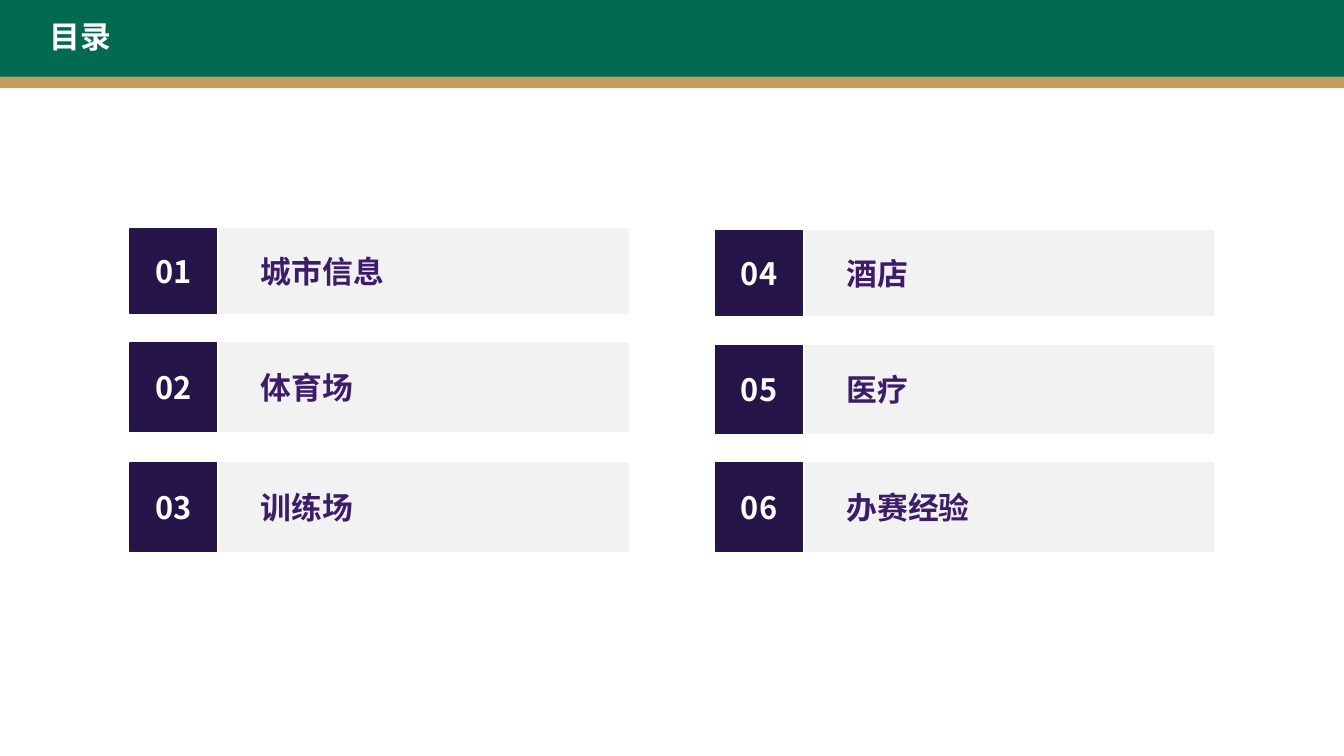
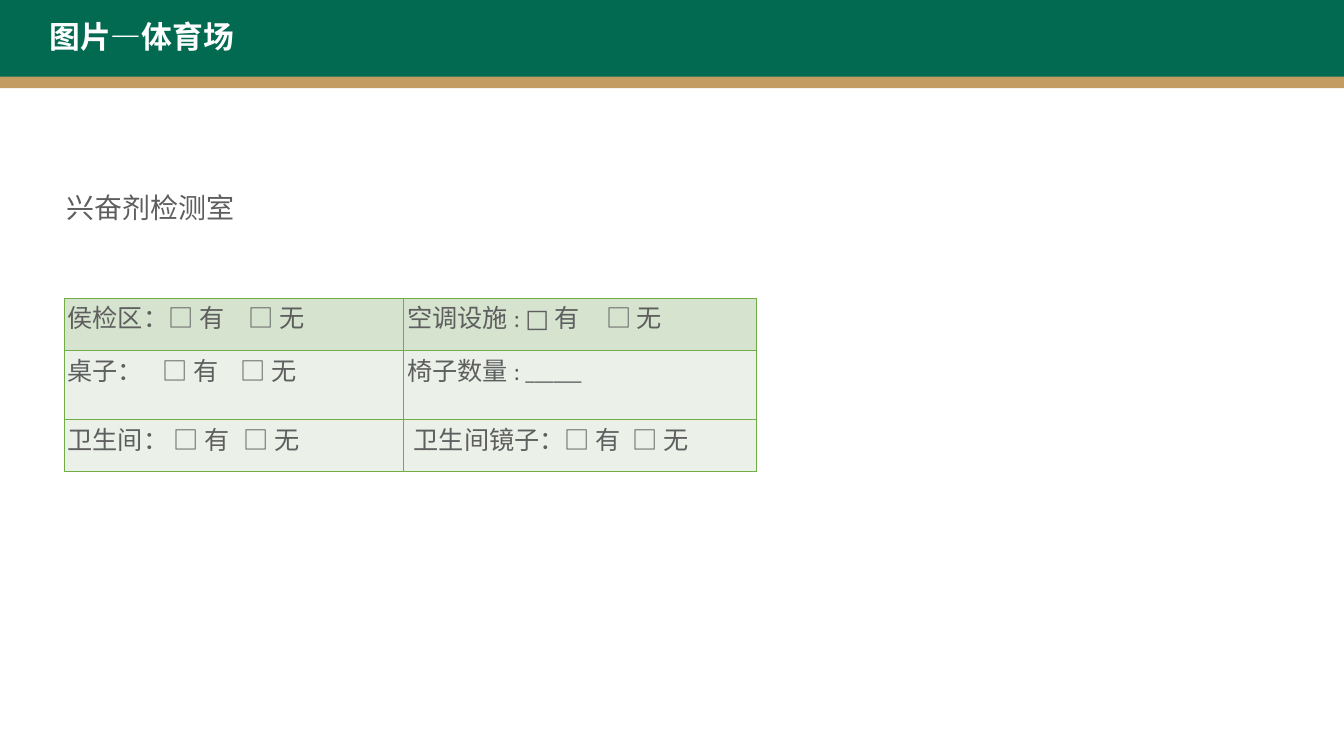
import dataclasses
import typing

import pptx
import pptx.dml.color
import pptx.enum.shapes
import pptx.enum.text
import pptx.oxml.ns
import pptx.oxml.xmlchemy
import pptx.slide
import pptx.util
import lxml.etree

WIDE = pptx.util.Inches(26.67)
HIGH = pptx.util.Inches(15)
ALIGN = pptx.enum.text.PP_ALIGN
ANCHOR = pptx.enum.text.MSO_ANCHOR


@dataclasses.dataclass(frozen=True)
class Theme:
    green: str = "036A52"
    tan: str = "C39C61"
    navy: str = "261549"
    purple: str = "3D1D69"
    pale: str = "F2F2F2"
    white: str = "FFFFFF"
    gray: str = "5E5E5E"
    head: str = "D5E3CF"
    body: str = "EBF1E9"
    rule: str = "70AD47"
    sans: str = "Noto Sans CJK SC"
    serif: str = "Times New Roman"
    grid: str = "Cambria"
    big: int = 44
    mid: int = 40
    small: int = 36


THEME = Theme()


@dataclasses.dataclass(frozen=True)
class Box:
    """A place, in percent of the slide's width and height."""
    left: float
    top: float
    width: float
    height: float

    def place(self) -> tuple[int, int, int, int]:
        return (across(self.left), down(self.top),
                across(self.width), down(self.height))


@dataclasses.dataclass(frozen=True)
class Style:
    size: int
    name: str
    color: str
    bold: bool = False
    align: ALIGN = ALIGN.LEFT


@dataclasses.dataclass(frozen=True)
class Column:
    left: float
    tops: tuple[float, ...]
    topics: tuple[str, ...]


class Entry(typing.NamedTuple):
    """A table cell; stops are the tab stops, in percent of the width."""
    text: str
    stops: tuple[float, ...] = ()
    indent: float = 0.26


TITLE = Style(THEME.big, THEME.sans, THEME.white, True)
NUMBER = dataclasses.replace(TITLE, align=ALIGN.CENTER)
TOPIC = dataclasses.replace(TITLE, color=THEME.purple)
ROOM = Style(THEME.mid, THEME.serif, THEME.gray)
CELL = Style(THEME.small, THEME.grid, THEME.gray, align=ALIGN.JUSTIFY)

NUMBER_WIDTH, TOPIC_SHIFT, TOPIC_WIDTH = 6.45, 6.68, 30.38
TOPIC_INDENT = 3.05
HEIGHTS = (11.2, 11.67, 11.67)
COLUMNS = (
    Column(9.68, (30.27, 45.4, 61.27), ("城市信息", "体育场", "训练场")),
    Column(53.25, (30.53, 45.67, 61.27), ("酒店", "医疗", "办赛经验")),
)

TABLE_COLUMNS = (25.27, 26.28)
TABLE_ROWS = (6.93, 9.13, 6.87)
ENTRIES = (
    (Entry("侯检区：□ 有\t□ 无", (13.5,)),
     Entry("空调设施 : □ 有\t□ 无", (14.8,))),
    (Entry("桌子：\t□ 有\t□ 无", (7.05, 12.86)),
     Entry("椅子数量 : ______")),
    (Entry("卫生间： □ 有\t□ 无", (13.1,)),
     Entry("卫生间镜子：□ 有\t□ 无", (16.3,), 0.75)),
)


def across(share: float) -> int:
    return round(WIDE * share / 100)


def down(share: float) -> int:
    return round(HIGH * share / 100)


def color(code: str) -> pptx.dml.color.RGBColor:
    return pptx.dml.color.RGBColor.from_string(code)


def apply(target: typing.Any, **values: typing.Any) -> None:
    for name, value in values.items():
        setattr(target, name, value)


def add_node(parent: typing.Any, tag: str, **values: typing.Any) -> typing.Any:
    node = lxml.etree.SubElement(parent, pptx.oxml.ns.qn(tag))
    for name, value in values.items():
        node.set(name, str(value))
    return node


def write(frame: typing.Any, text: str, style: Style) -> None:
    line = frame.paragraphs[0]
    line.alignment = style.align
    run = line.add_run()
    run.text = text
    apply(run.font, size=pptx.util.Pt(style.size), name=style.name,
          bold=style.bold)
    run.font.color.rgb = color(style.color)
    add_node(run.font._element, "a:ea", typeface=THEME.sans)


def add_block(slide: pptx.slide.Slide, box: Box, fill: str,
              edge: bool = False) -> typing.Any:
    shape = slide.shapes.add_shape(
        pptx.enum.shapes.MSO_SHAPE.RECTANGLE, *box.place())
    shape.shadow.inherit = False
    shape.fill.solid()
    shape.fill.fore_color.rgb = color(fill)
    if edge:
        shape.line.color.rgb = color(fill)
        shape.line.width = pptx.util.Pt(2)
    else:
        shape.line.fill.background()
    return shape


def add_text(slide: pptx.slide.Slide, box: Box, text: str, style: Style,
             **layout: typing.Any) -> None:
    frame = slide.shapes.add_textbox(*box.place()).text_frame
    apply(frame, word_wrap=True,
          auto_size=pptx.enum.text.MSO_AUTO_SIZE.SHAPE_TO_FIT_TEXT, **layout)
    write(frame, text, style)


def add_label(slide: pptx.slide.Slide, box: Box, fill: str, text: str,
              style: Style, **layout: typing.Any) -> None:
    frame = add_block(slide, box, fill, edge=True).text_frame
    apply(frame, word_wrap=True, vertical_anchor=ANCHOR.MIDDLE, **layout)
    write(frame, text, style)


def add_bands(slide: pptx.slide.Slide) -> None:
    """Draw the bands and move them to the layout all slides share."""
    for box, fill in ((Box(0, 8.53, 100, 3.13), THEME.tan),
                      (Box(0, 0, 100, 10.13), THEME.green)):
        band = add_block(slide, box, fill)
        slide.slide_layout.shapes.element.append(band.element)


def add_title(slide: pptx.slide.Slide, text: str, width: float) -> None:
    add_text(slide, Box(3.3, 2, width, 5.6), text, TITLE)


def add_topics(slide: pptx.slide.Slide) -> None:
    count = 0
    for column in COLUMNS:
        for top, height, topic in zip(column.tops, HEIGHTS, column.topics):
            count += 1
            add_label(slide, Box(column.left, top, NUMBER_WIDTH, height),
                      THEME.navy, f"{count:02}", NUMBER)
            add_label(slide, Box(column.left + TOPIC_SHIFT, top,
                                 TOPIC_WIDTH, height),
                      THEME.pale, topic, TOPIC,
                      margin_left=across(TOPIC_INDENT))


def add_borders(cell: typing.Any) -> None:
    props = cell._tc.get_or_add_tcPr()
    for side in ("L", "R", "T", "B"):
        line = add_node(props, f"a:ln{side}", w=pptx.util.Pt(1))
        add_node(add_node(line, "a:solidFill"), "a:srgbClr", val=THEME.rule)


def fill_cell(cell: typing.Any, entry: Entry, fill: str) -> None:
    apply(cell, margin_left=across(entry.indent), margin_right=across(0.26),
          margin_top=0, margin_bottom=0)
    add_borders(cell)
    cell.fill.solid()
    cell.fill.fore_color.rgb = color(fill)
    write(cell.text_frame, entry.text, CELL)
    if entry.stops:
        props = cell.text_frame.paragraphs[0]._p.get_or_add_pPr()
        tabs = add_node(props, "a:tabLst")
        for stop in entry.stops:
            add_node(tabs, "a:tab", pos=across(stop), algn="l")


def add_checks(slide: pptx.slide.Slide) -> None:
    box = Box(4.76, 39.47, sum(TABLE_COLUMNS), sum(TABLE_ROWS))
    table = slide.shapes.add_table(
        len(TABLE_ROWS), len(TABLE_COLUMNS), *box.place()).table
    apply(table, first_row=False, horz_banding=False)
    for column, width in zip(table.columns, TABLE_COLUMNS):
        column.width = across(width)
    for index, (row, height) in enumerate(zip(table.rows, TABLE_ROWS)):
        row.height = down(height)
        fill = THEME.body if index else THEME.head
        for cell, entry in zip(row.cells, ENTRIES[index]):
            fill_cell(cell, entry, fill)


def main() -> None:
    deck = pptx.Presentation()
    apply(deck, slide_width=WIDE, slide_height=HIGH)
    blank = deck.slide_layouts[6]

    agenda = deck.slides.add_slide(blank)
    add_bands(agenda)
    add_title(agenda, "目录", 16.12)
    add_topics(agenda)

    venue = deck.slides.add_slide(blank)
    add_title(venue, "图片—体育场", 24.52)
    inset = across(0.22)
    add_text(venue, Box(4.76, 24.73, 38.28, 5.27), "兴奋剂检测室", ROOM,
             vertical_anchor=ANCHOR.MIDDLE, margin_left=inset,
             margin_right=inset, margin_top=inset, margin_bottom=inset)
    add_checks(venue)

    deck.save("out.pptx")


if __name__ == "__main__":
    main()
